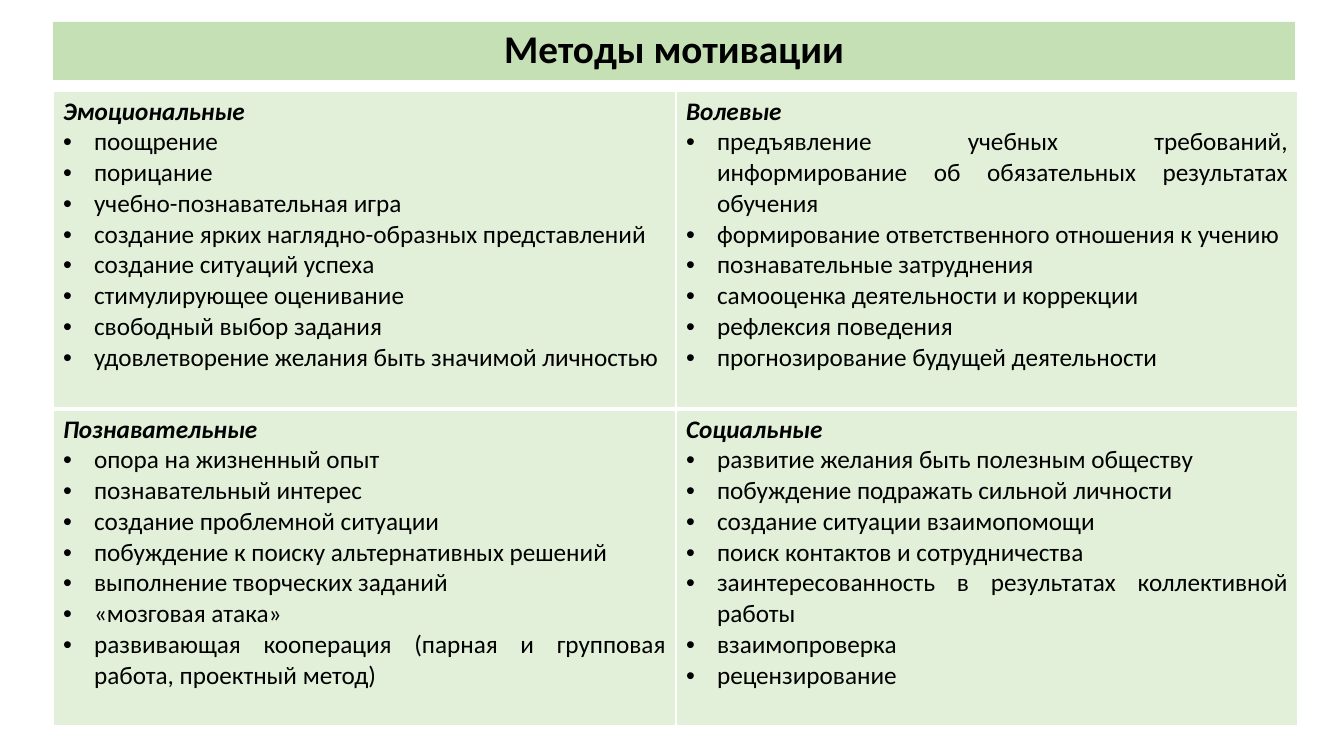
from lxml import etree
from pptx import Presentation
from pptx.dml.color import RGBColor
from pptx.enum.text import MSO_ANCHOR, PP_ALIGN
from pptx.oxml.ns import qn
from pptx.util import Emu, Pt

CENTER, JUSTIFY = PP_ALIGN.CENTER, PP_ALIGN.JUSTIFY
MIDDLE = MSO_ANCHOR.MIDDLE
BLACK = RGBColor(0x00, 0x00, 0x00)
WHITE = RGBColor(0xFF, 0xFF, 0xFF)
GREEN = RGBColor(0xC5, 0xE0, 0xB4)
PALE = RGBColor(0xE2, 0xF0, 0xD9)
FONT = "Calibri"
INDENT = 31

METHODS = [
    [
        ("Эмоциональные", [
            "поощрение",
            "порицание",
            "учебно-познавательная игра",
            "создание ярких наглядно-образных представлений",
            "создание ситуаций успеха",
            "стимулирующее оценивание",
            "свободный выбор задания",
            "удовлетворение желания быть значимой личностью",
        ]),
        ("Волевые", [
            "предъявление учебных требований, информирование "
            "об обязательных результатах обучения",
            "формирование ответственного отношения к учению",
            "познавательные затруднения",
            "самооценка деятельности и коррекции",
            "рефлексия поведения",
            "прогнозирование будущей деятельности",
        ]),
    ],
    [
        ("Познавательные", [
            "опора на жизненный опыт",
            "познавательный интерес",
            "создание проблемной ситуации",
            "побуждение к поиску альтернативных решений",
            "выполнение творческих заданий",
            "«мозговая атака»",
            "развивающая кооперация (парная и групповая работа, "
            "проектный метод)",
        ]),
        ("Социальные", [
            "развитие желания быть полезным обществу",
            "побуждение подражать сильной личности",
            "создание ситуации взаимопомощи",
            "поиск контактов и сотрудничества",
            "заинтересованность в результатах коллективной работы",
            "взаимопроверка",
            "рецензирование",
        ]),
    ],
]


def px(n):
    return Emu(round(n * 914400 / 100.8))


def style(par, size, bold, italic=False):
    font = par.runs[0].font
    font.name, font.size = FONT, Pt(size)
    font.bold, font.italic = bold, italic
    font.color.rgb = BLACK


# Slide
deck = Presentation()
deck.slide_width, deck.slide_height = px(1344), px(756)
slide = deck.slides.add_slide(deck.slide_layouts[5])

# Title band
title = slide.shapes.title
title.left, title.top, title.width, title.height = px(53), px(22), px(1242), px(58)
title.fill.solid()
title.fill.fore_color.rgb = GREEN
frame = title.text_frame
frame.text = "Методы мотивации"
frame.vertical_anchor = MIDDLE
head = frame.paragraphs[0]
head.alignment, head.line_spacing = CENTER, 0.9
style(head, 28, True)

# Table of methods
grid = slide.shapes.add_table(2, 2, px(53), px(91), px(1245), px(635)).table
grid.first_row = grid.horz_banding = False
grid.columns[0].width, grid.columns[1].width = px(623), px(622)
grid.rows[0].height, grid.rows[1].height = px(318), px(317)

for r, row in enumerate(METHODS):
    for c, (name, items) in enumerate(row):
        cell = grid.cell(r, c)
        cell.fill.solid()
        cell.fill.fore_color.rgb = PALE

        # Heading and bulleted items
        cell.text_frame.text = "\n".join([name] + items)
        for i, par in enumerate(cell.text_frame.paragraphs):
            par.alignment = JUSTIFY
            style(par, 18, i == 0, i == 0)
            if i:
                props = par._p.get_or_add_pPr()
                props.set("marL", str(px(INDENT)))
                props.set("indent", str(-px(INDENT)))
                etree.SubElement(props, qn("a:buFont"), typeface="Arial")
                etree.SubElement(props, qn("a:buChar"), char="•")

        # Borders, thicker between the two rows
        props = cell._tc.get_or_add_tcPr()
        thick = "lnT" if r else "lnB"
        for i, side in enumerate(("lnL", "lnR", "lnT", "lnB")):
            line = etree.Element(qn("a:" + side))
            line.set("w", str(Pt(3 if side == thick else 1)))
            fill = etree.SubElement(line, qn("a:solidFill"))
            etree.SubElement(fill, qn("a:srgbClr"), val=str(WHITE))
            props.insert(i, line)

deck.save("out.pptx")
